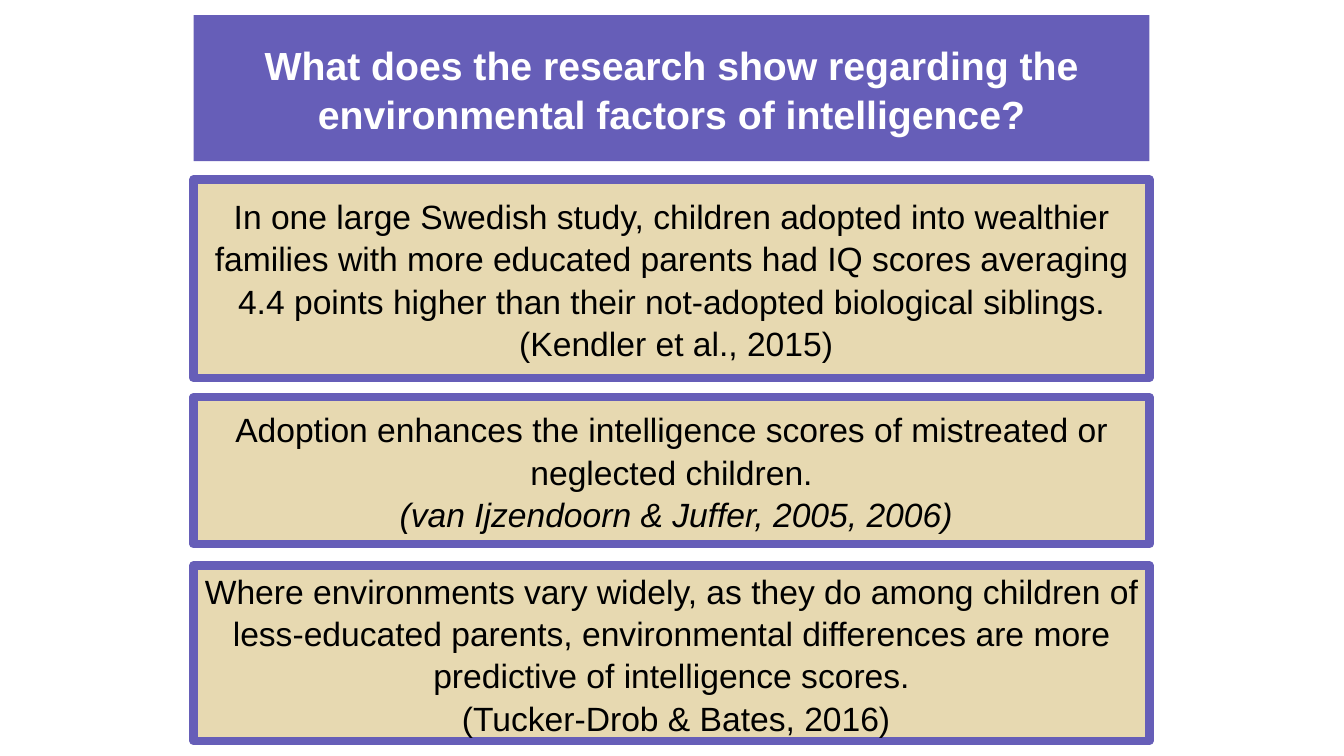
from lxml import etree
from pptx import Presentation
from pptx.dml.color import RGBColor
from pptx.enum.shapes import MSO_SHAPE
from pptx.enum.text import MSO_ANCHOR, PP_ALIGN
from pptx.oxml.ns import qn
from pptx.util import Inches, Pt

COLORS = {"purple": "665EB8", "sand": "E7D9B1", "white": "FFFFFF", "black": "000000"}
FONT = "Arial"
LEFT, WIDTH = 1.92, 9.48

TITLE = ("What does the research show regarding the environmental "
         "factors of intelligence?")

# Top, height, finding, citation, citation in italics
FINDINGS = [
    (1.78, 1.97,
     "In one large Swedish study, children adopted into wealthier families with "
     "more educated parents had IQ scores averaging 4.4 points higher than their "
     "not-adopted biological siblings.",
     "(Kendler et al., 2015)", False),
    (3.94, 1.46,
     "Adoption enhances the intelligence scores of mistreated or neglected children.",
     "(van Ijzendoorn & Juffer, 2005, 2006)", True),
    (5.61, 1.74,
     "Where environments vary widely, as they do among children of less-educated "
     "parents, environmental differences are more predictive of intelligence scores.",
     "(Tucker-Drob & Bates, 2016)", False),
]


def color(name):
    return RGBColor.from_string(COLORS[name])


def write(paragraph, text, size=24, ink="black", bold=False, italic=False):
    paragraph.alignment = PP_ALIGN.CENTER
    paragraph.line_spacing = 1.05
    paragraph.space_before = paragraph.space_after = Pt(0)
    run = paragraph.add_run()
    run.text = text
    run.font.name = FONT
    run.font.size = Pt(size)
    run.font.bold = bold
    run.font.italic = italic
    run.font.color.rgb = color(ink)


def prepare_frame(panel, fill):
    panel.fill.solid()
    panel.fill.fore_color.rgb = color(fill)
    frame = panel.text_frame
    frame.word_wrap = True
    frame.vertical_anchor = MSO_ANCHOR.MIDDLE
    return frame


def add_title(slide):
    heading = slide.shapes.title
    heading.left, heading.top = Inches(LEFT), Inches(0.15)
    heading.width, heading.height = Inches(WIDTH), Inches(1.45)
    frame = prepare_frame(heading, "purple")
    write(frame.paragraphs[0], TITLE, size=28, ink="white", bold=True)


def add_finding(slide, top, height, finding, citation, italic):
    card = slide.shapes.add_shape(MSO_SHAPE.RECTANGLE, Inches(LEFT), Inches(top),
                                  Inches(WIDTH), Inches(height))
    card.shadow.inherit = False
    frame = prepare_frame(card, "sand")
    card.line.color.rgb = color("purple")
    card.line.width = Pt(6)
    # Rounded corners on the thick border
    etree.SubElement(card.line._get_or_add_ln(), qn("a:round"))
    write(frame.paragraphs[0], finding)
    write(frame.add_paragraph(), " " + citation, italic=italic)


def main():
    deck = Presentation()
    deck.slide_width, deck.slide_height = Inches(13.33), Inches(7.5)
    slide = deck.slides.add_slide(deck.slide_layouts[5])
    add_title(slide)
    for finding in FINDINGS:
        add_finding(slide, *finding)
    deck.save("out.pptx")


if __name__ == "__main__":
    main()
